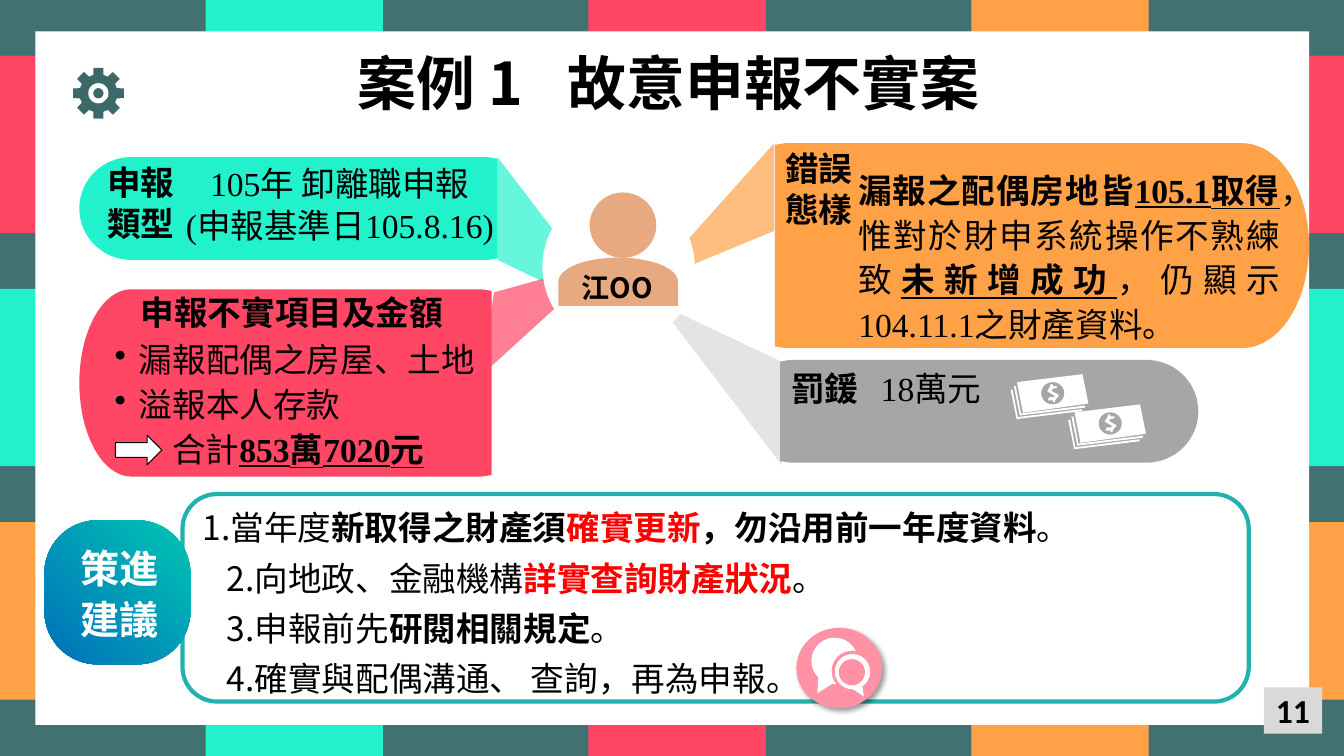
import math
import lxml.etree
import pptx
import pptx.dml.color
import pptx.enum.shapes
import pptx.enum.text
import pptx.oxml.ns
import pptx.util

Cm, Pt = pptx.util.Cm, pptx.util.Pt
KIND = pptx.enum.shapes.MSO_SHAPE
ALIGN = pptx.enum.text.PP_ALIGN
ANCHOR = pptx.enum.text.MSO_ANCHOR
SANS, SERIF = "Noto Sans CJK SC", "Times New Roman"
TEAL, MINT, ROSE, GOLD = "427172", "22F2CC", "FF4664", "FFA146"
GREY, WHITE, BLACK, RED = "A6A6A6", "FFFFFF", "000000", "FF0000"
SKIN, PINK = "E7AA80", "FF93A5"
STRONG = {"bold": True}
MARK = {"bold": True, "under": True}


def rgb(hue):
    return pptx.dml.color.RGBColor.from_string(hue)


def add(node, tag, **attrs):
    return lxml.etree.SubElement(node, pptx.oxml.ns.qn(tag), attrs)


def inner(box, x, y, w, h):
    """Turn a place measured from the corner of box into a slide place."""
    return box[0] + x, box[1] + y, w, h


def paint(shape, fill=None, line=None, width=1, alpha=None):
    shape.shadow.inherit = False
    if fill:
        shape.fill.solid()
        shape.fill.fore_color.rgb = rgb(fill)
    else:
        shape.fill.background()
    if alpha:
        tone = shape.element.spPr.find(pptx.oxml.ns.qn("a:solidFill"))[0]
        add(tone, "a:alpha", val=str(alpha * 1000))
    if line:
        shape.line.color.rgb = rgb(line)
        shape.line.width = Pt(width)
    else:
        shape.line.fill.background()
    return shape


def draw(slide, kind, box, fill=None, **look):
    return paint(slide.shapes.add_shape(kind, *map(Cm, box)), fill, **look)


def trace(slide, box, dots, fill, **look):
    """Draw a closed outline whose points are measured from the corner of box."""
    spots = [(Cm(box[0] + x), Cm(box[1] + y)) for x, y in dots]
    path = slide.shapes.build_freeform(*spots[0], scale=1.0)
    path.add_line_segments(spots[1:], close=True)
    return paint(path.convert_to_shape(), fill, **look)


def style(run, size, face=SANS, hue=BLACK, bold=False, under=False):
    font = run.font
    font.size, font.bold, font.underline, font.name = Pt(size), bold, under, face
    font.color.rgb = rgb(hue)
    add(font._element, "a:ea", typeface=SANS)


def write(shape, lines, align=ALIGN.LEFT, lead=None, after=0, inset=0.25,
          anchor=ANCHOR.TOP, size=24, **look):
    """Fill shape with lines; a line is a string or a list of (text, format) runs."""
    frame = shape.text_frame
    frame.word_wrap = True
    frame.auto_size = pptx.enum.text.MSO_AUTO_SIZE.NONE
    frame.vertical_anchor = anchor
    frame.margin_left = frame.margin_right = Cm(inset)
    for i, line in enumerate(lines):
        para = frame.add_paragraph() if i else frame.paragraphs[0]
        para.alignment, para.space_after = align, Pt(after)
        if lead:
            para.line_spacing = Pt(lead)
        for text, extra in [(line, {})] if isinstance(line, str) else line:
            run = para.add_run()
            run.text = text
            style(run, **{"size": size, **look, **extra})
    return frame


def label(slide, box, lines, **look):
    return write(slide.shapes.add_textbox(*map(Cm, box)), lines, **look)


def indent(para, left, first, mark=None):
    props = para._p.get_or_add_pPr()
    props.set("marL", str(Cm(left)))
    props.set("indent", str(Cm(first)))
    if mark:
        add(props, "a:buChar", char=mark)


def border(slide, box):
    x, y, w, h = box
    band, row, col = 4.47, 5.88, 9.65
    draw(slide, KIND.RECTANGLE, box, TEAL)
    for i, hue in enumerate((ROSE, MINT, GOLD)):
        draw(slide, KIND.RECTANGLE, (x, y + 1.4 + i * row, w, band), hue)
    for i, hue in enumerate((MINT, ROSE, GOLD)):
        draw(slide, KIND.RECTANGLE, (x + 5.18 + i * col, y, band, h), hue)
    draw(slide, KIND.RECTANGLE, inner(box, 0.89, 0.79, 32.1, 17.48), WHITE)


def gear(slide, box):
    mid = box[2] / 2
    dots = []
    for tooth in range(8):
        for turn, reach in ((-0.27, 0.74), (-0.19, 1), (0.19, 1), (0.27, 0.74)):
            angle = tooth * math.pi / 4 + turn
            dots.append((mid + mid * reach * math.cos(angle),
                         mid + mid * reach * math.sin(angle)))
    trace(slide, box, dots, "3D6869")
    for size, hue in ((0.51, WHITE), (0.26, "3D6869")):
        draw(slide, KIND.OVAL, inner(box, mid - size / 2, mid - size / 2, size, size), hue)


def tab(slide, box, cap, beam, hue, right=False, glow=None):
    """Draw a bar with one round end, and the beam that points to the person."""
    w, h = box[2:]
    dots = [(w - 0.25, 0), (w, 0.04), (w, h - 0.04), (w - 0.25, h)]
    for i in range(41):
        angle = math.pi * i / 40
        dots.append((cap - cap * math.sin(angle), h / 2 + h / 2 * math.cos(angle)))
    if right:
        dots = [(w - x, y) for x, y in dots]
    trace(slide, box, beam, glow or hue, alpha=69)
    trace(slide, box, dots, hue)


def filing(slide, box):
    tab(slide, box, 1.31, [(10.54, 0), (13.67, 4.09), (10.54, 2.59)], MINT)
    label(slide, inner(box, 2.22, 0.18, 8.69, 2.18),
          ["105年 卸離職申報", "(申報基準日105.8.16)"], face=SERIF,
          align=ALIGN.CENTER, lead=24, after=6, inset=0.1)
    label(slide, inner(box, 0.33, 0, 2.44, 2.31), ["申報類型"],
          align=ALIGN.CENTER, bold=True)


def items(slide, box):
    tab(slide, box, 1.31, [(10.12, 2.18), (13.29, -0.71), (10.45, 0.08)], ROSE)
    frame = label(slide, inner(box, 0.64, 1.02, 9.75, 3.58),
                  ["漏報配偶之房屋、土地", "溢報本人存款",
                   [("合計", {}), ("853萬7020元", MARK)]], lead=32, face=SERIF)
    for para in frame.paragraphs[:2]:
        indent(para, 0.61, -0.61, "•")
    frame.paragraphs[2].alignment = ALIGN.CENTER
    label(slide, inner(box, 1.14, -0.05, 8.43, 1.27), ["申報不實項目及金額"],
          align=ALIGN.CENTER, bold=True)
    draw(slide, KIND.RIGHT_ARROW, inner(box, 0.91, 3.68, 1.17, 0.74), WHITE,
         line=BLACK, width=0.75)


def error(slide, box):
    tab(slide, box, 1.68, [(-0.02, 0), (-3.15, 3.5), (-0.02, 2.21)], GOLD, right=True)
    label(slide, inner(box, 1.85, 0.43, 11.13, 4.72), [[
        ("漏報之配偶房地皆", STRONG), ("105.1", {**MARK, "face": SERIF}),
        ("取得", MARK), ("，惟對於財申系統操作不熟練致", {}),
        ("未新增成功", MARK), ("，仍顯示", {}),
        ("104.11.1之", {"face": SERIF}), ("財產資料。", {})]],
        align=ALIGN.JUSTIFY, lead=32)
    label(slide, inner(box, -0.08, 0, 2.36, 2.31), ["錯誤態樣"],
          align=ALIGN.CENTER, bold=True)


def cash(slide, box):
    edge = [(0.1, 0.3), (0.05, 0.3), (0.2, 1.04), (1.85, 0.84), (1.85, 0.79), (0.23, 0.99)]
    trace(slide, box, [(0.13, 0.2), (0.28, 0.97), (1.93, 0.74), (1.78, 0)], WHITE)
    for step in range(2):
        trace(slide, box, [(x - 0.08 * step, y + 0.09 * step) for x, y in edge], WHITE)
    draw(slide, KIND.OVAL, inner(box, 0.74, 0.2, 0.58, 0.56), GREY)
    trace(slide, box, [
        (1.07, 0.46), (0.99, 0.41), (1.04, 0.36), (1.12, 0.36), (1.14, 0.3),
        (1.04, 0.3), (1.02, 0.25), (0.97, 0.25), (0.97, 0.3), (0.89, 0.43),
        (1.02, 0.51), (1.09, 0.56), (1.04, 0.58), (0.94, 0.58), (0.91, 0.66),
        (1.04, 0.66), (1.04, 0.71), (1.09, 0.69), (1.09, 0.66), (1.19, 0.53)], WHITE)


def fine(slide, box):
    tab(slide, box, 1.31, [(0.05, 2.66), (-3.07, -1.42), (0.05, 0.05)], GREY,
        right=True, glow="D9D9D9")
    label(slide, inner(box, 0.03, 0.08, 5.79, 1.27),
          [[("罰鍰", STRONG), ("　", {"size": 16}), ("18萬元", {"face": SERIF})]])
    for x, y in ((7.29, 1.12), (5.84, 0.36)):
        cash(slide, inner(box, x, y, 1.93, 1.14))


def person(slide, box):
    draw(slide, KIND.OVAL, box, WHITE)
    draw(slide, KIND.OVAL, inner(box, 1.19, 0.1, 1.68, 1.65), SKIN)
    body = draw(slide, KIND.FLOWCHART_DELAY, inner(box, 1.3, 0.84, 1.22, 3.02), SKIN)
    body.rotation = 270
    label(slide, inner(box, 0.38, 1.93, 3.02, 1.12), ["江OO"], size=20,
          bold=True, align=ALIGN.CENTER)


def advice(slide, box):
    panel = draw(slide, KIND.ROUNDED_RECTANGLE, box, line="21B2AF", width=3)
    alert = {"bold": True, "hue": RED}
    frame = write(panel, [
        [("1.當年度", {}), ("新取得之財產須", STRONG), ("確實更新", alert),
         ("，勿沿用前一年度資料", STRONG), ("。", {})],
        [("2.向地政、金融機構", {}), ("詳實查詢財產狀況", alert), ("。", {})],
        [("3.申報前先", {}), ("研閱相關規定", STRONG), ("。", {})],
        "4.確實與配偶溝通、 查詢，再為申報。"],
        align=ALIGN.JUSTIFY, lead=36, anchor=ANCHOR.MIDDLE)
    for i, para in enumerate(frame.paragraphs):
        indent(para, 0.61, 0 if i else -0.61)
    badge = draw(slide, KIND.ROUNDED_RECTANGLE, inner(box, -3.48, 0.66, 3.68, 3.63), MINT)
    badge.adjustments[0] = 0.37
    badge.fill.gradient()
    badge.fill.gradient_angle = 225
    for stop, hue in zip(badge.fill.gradient_stops, ("00C6B2", "006FBB")):
        stop.color.rgb = rgb(hue)
    label(slide, inner(box, -3.15, 1.09, 3.15, 2.74), ["策進建議"], size=28, hue=WHITE,
          bold=True, align=ALIGN.CENTER, lead=36, anchor=ANCHOR.MIDDLE)


def chat(slide, box):
    disc = draw(slide, KIND.OVAL, box, PINK)
    cast = add(disc.element.spPr.find(pptx.oxml.ns.qn("a:effectLst")), "a:outerShdw",
               blurRad=str(Pt(4)), dist=str(Pt(3)), dir="2700000")
    add(add(cast, "a:srgbClr", val=BLACK), "a:alpha", val="40000")
    trace(slide, box, [(0.53, 1.65), (0.56, 1.2), (1, 1.35)], WHITE)
    for x, y, size, hue in ((0.38, 0.25, 1.17, WHITE), (0.89, 0.58, 1.02, PINK),
                            (0.97, 0.66, 0.89, WHITE), (1.07, 0.79, 0.66, PINK)):
        draw(slide, KIND.OVAL, inner(box, x, y, size, size), hue)
    trace(slide, box, [(1.7, 1.73), (1.4, 1.53), (1.65, 1.35)], WHITE)


def title(slide, box):
    head = slide.shapes.title
    head.left, head.top, head.width, head.height = map(Cm, box)
    slide.shapes._spTree.append(head.element)
    frame = write(head, [[("案例 1", {}), ("　", {"size": 32}), ("故意申報不實案", {})]],
                  size=42, bold=True, align=ALIGN.CENTER, inset=0.33)
    frame.margin_top = Cm(0.33)


def number(slide, box):
    plate = draw(slide, KIND.RECTANGLE, box, "D9D9D9")
    write(plate, ["11"], face="Calibri", bold=True, align=ALIGN.CENTER,
          anchor=ANCHOR.MIDDLE, inset=0)


def main():
    deck = pptx.Presentation()
    deck.slide_width, deck.slide_height = Cm(33.87), Cm(19.05)
    slide = deck.slides.add_slide(deck.slide_layouts[5])
    border(slide, (0, 0, 33.87, 19.05))
    gear(slide, (1.83, 1.7, 1.3, 1.3))
    filing(slide, (2, 3.96, 10.54, 2.59))
    items(slide, (2, 7.29, 10.39, 4.72))
    error(slide, (19.53, 3.61, 13.46, 5.16))
    fine(slide, (19.66, 9.07, 10.54, 2.59))
    advice(slide, (4.6, 12.45, 26.87, 5.23))
    person(slide, (13.67, 4.75, 3.84, 3.96))
    title(slide, (7.09, 0.84, 19.5, 3.35))
    chat(slide, (20.07, 15.82, 2.16, 2.03))
    number(slide, (31.85, 17.32, 1.47, 1.17))
    deck.save("out.pptx")


if __name__ == "__main__":
    main()
